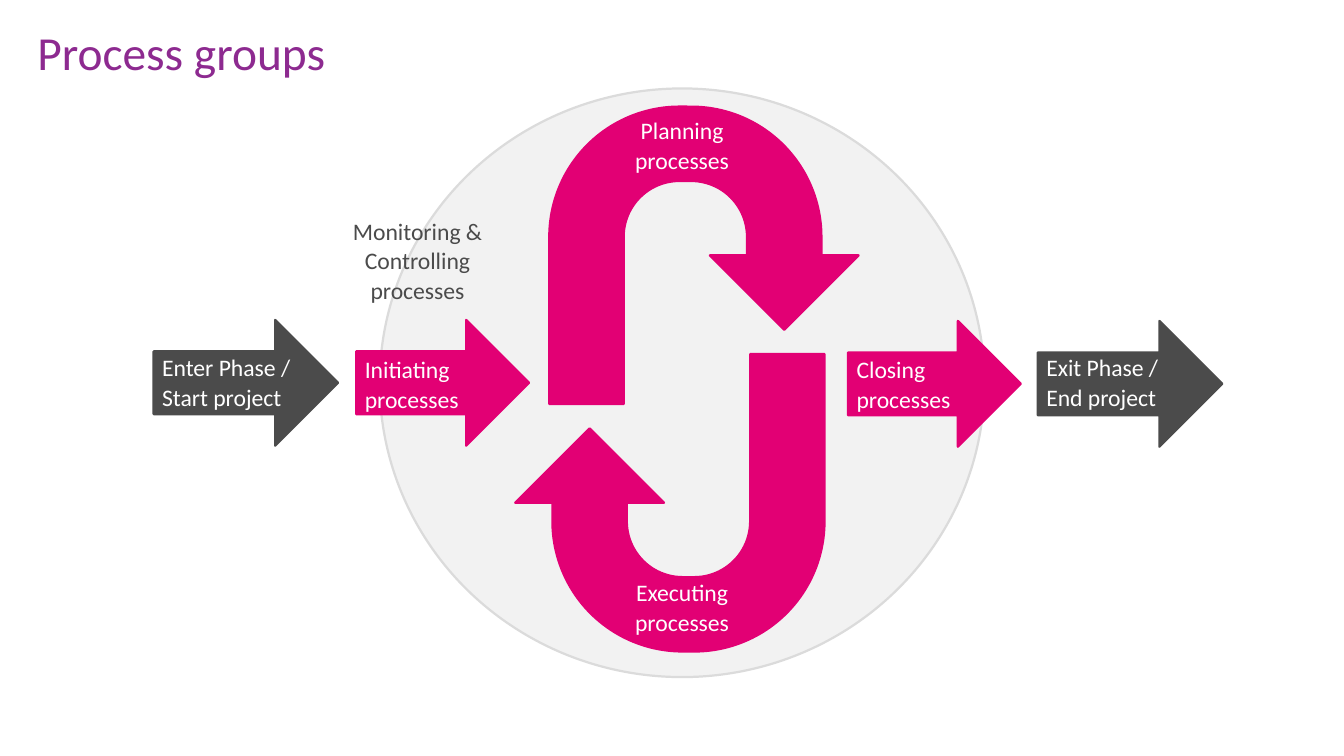
from pptx import Presentation
from pptx import util as u
from pptx.dml.color import RGBColor
from pptx.enum import shapes, text

PURPLE = RGBColor(0x8D, 0x2A, 0x90)
MAGENTA = RGBColor(0xE2, 0x00, 0x74)
CHARCOAL = RGBColor(0x4B, 0x4B, 0x4B)
PALE = RGBColor(0xF2, 0xF2, 0xF2)
OUTLINE = RGBColor(0xDB, 0xDB, 0xDB)
WHITE = RGBColor(0xFF, 0xFF, 0xFF)

PX = u.Inches(1) // 100
SLIDE_SIZE = (1260, 709)
FONT = "Calibri"
TITLE = "Process groups"
TITLE_BOX = (35, 28, 1189, 55)
CYCLE_CIRCLE = (356, 83, 567, 552)
ARROW_HEIGHT = 118
UTURN_SIZE = (290, 279)
LABEL_HEIGHT = 64

# label, left, top, arrow width, label top, label width, colour
PHASE_ARROWS = [
    ("Enter Phase / Start project", 144, 300, 173, 326, 154, CHARCOAL),
    ("Initiating\vprocesses", 334, 300, 162, 328, 123, MAGENTA),
    ("Closing\vprocesses", 795, 301, 162, 328, 109, MAGENTA),
    ("Exit Phase /\vEnd project", 973, 301, 173, 326, 154, CHARCOAL),
]
# left, top, rotation
UTURN_ARROWS = [(515, 100, 0), (483, 332, 180)]
# label, left, top, width, colour
CYCLE_LABELS = [
    ("Planning\vprocesses", 551, 104, 177, WHITE),
    ("Executing\vprocesses", 551, 537, 177, WHITE),
    ("Monitoring & Controlling\vprocesses", 275, 198, 233, CHARCOAL),
]


def scaled(*lengths):
    """Turn px lengths into EMU."""
    return [length * PX for length in lengths]


def add_figure(slide, kind, box, fill, line):
    """Add a filled and outlined preset shape."""
    shape = slide.shapes.add_shape(kind, *scaled(*box))
    shape.shadow.inherit = False
    shape.fill.solid()
    shape.fill.fore_color.rgb = fill
    shape.line.color.rgb = line
    shape.line.width = u.Pt(1.5)
    return shape


def add_label(slide, words, left, top, width, color, align):
    """Add a wrapped label."""
    frame = slide.shapes.add_textbox(*scaled(left, top, width, LABEL_HEIGHT)).text_frame
    frame.word_wrap = True
    frame.margin_left = frame.margin_right = 8 * PX
    frame.margin_top = frame.margin_bottom = 4 * PX
    paragraph = frame.paragraphs[0]
    paragraph.text = words
    paragraph.alignment = align
    paragraph.line_spacing = 1.04
    style_font(paragraph, 16, color)


def style_font(paragraph, size, color):
    """Set the typeface, size and colour of a paragraph."""
    paragraph.font.name = FONT
    paragraph.font.size = u.Pt(size)
    paragraph.font.color.rgb = color


def add_title(slide):
    """Place and format the title."""
    title = slide.shapes.title
    title.left, title.top, title.width, title.height = scaled(*TITLE_BOX)
    frame = title.text_frame
    frame.margin_left = frame.margin_right = frame.margin_top = frame.margin_bottom = 0
    frame.vertical_anchor = text.MSO_ANCHOR.TOP
    paragraph = frame.paragraphs[0]
    paragraph.text = TITLE
    paragraph.alignment = text.PP_ALIGN.LEFT
    paragraph.line_spacing = 0.9
    style_font(paragraph, 32, PURPLE)


def main():
    """Build and save the slide."""
    presentation = Presentation()
    presentation.slide_width, presentation.slide_height = scaled(*SLIDE_SIZE)
    slide = presentation.slides.add_slide(presentation.slide_layouts[5])
    add_title(slide)
    kinds = shapes.MSO_SHAPE
    add_figure(slide, kinds.OVAL, CYCLE_CIRCLE, PALE, OUTLINE)
    for left, top, rotation in UTURN_ARROWS:
        uturn = add_figure(slide, kinds.U_TURN_ARROW, (left, top, *UTURN_SIZE), MAGENTA, MAGENTA)
        uturn.rotation = rotation
    for words, left, top, width, label_top, label_width, color in PHASE_ARROWS:
        add_figure(slide, kinds.RIGHT_ARROW, (left, top, width, ARROW_HEIGHT), color, color)
        add_label(slide, words, left, label_top, label_width, WHITE, text.PP_ALIGN.LEFT)
    for label in CYCLE_LABELS:
        add_label(slide, *label, text.PP_ALIGN.CENTER)
    presentation.save("out.pptx")


if __name__ == "__main__":
    main()
